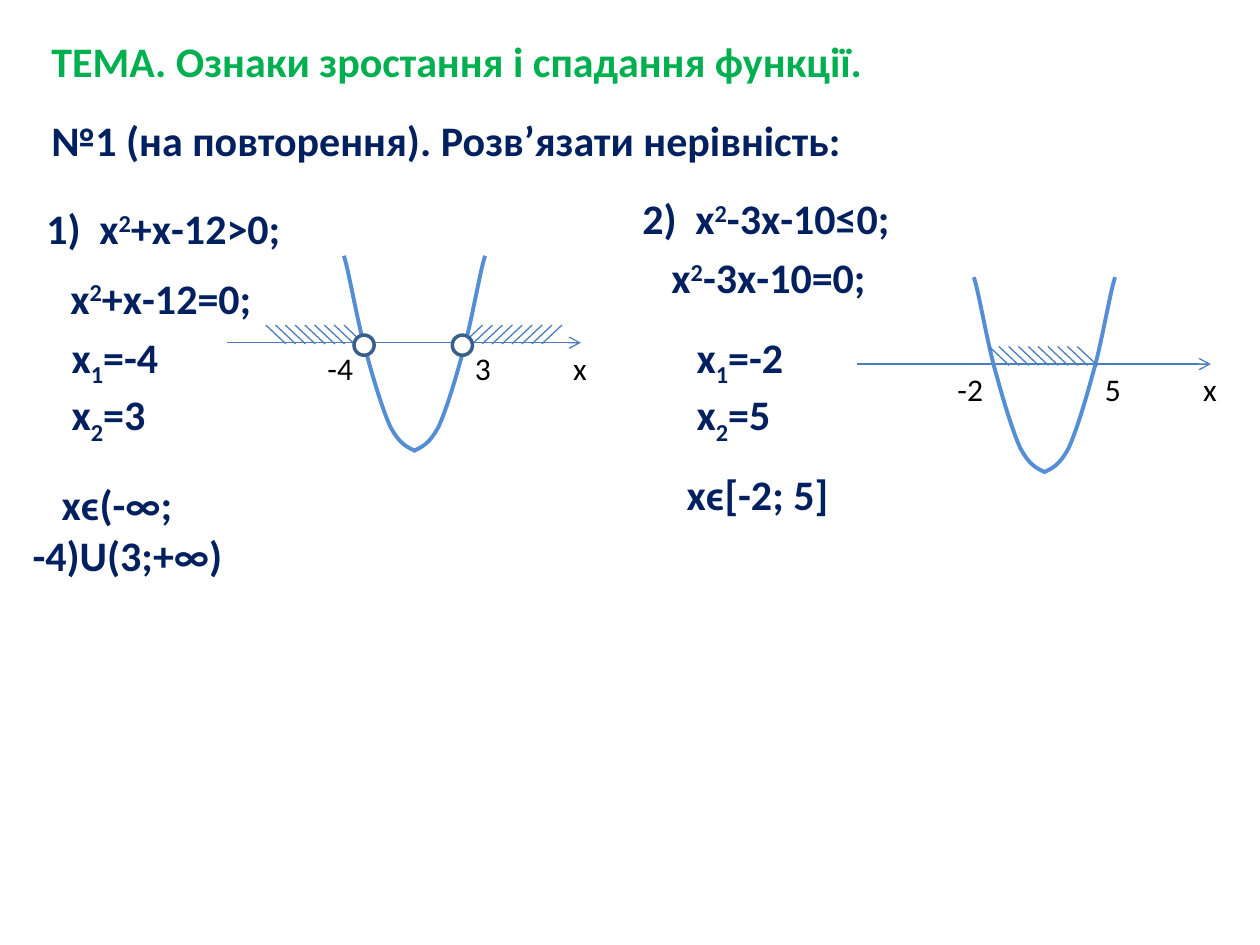
"""Build a slide that solves two quadratic inequalities with sketched parabolas."""
from dataclasses import dataclass

from lxml.etree import SubElement
from pptx import Presentation
from pptx.dml.color import RGBColor
from pptx.enum.shapes import MSO_CONNECTOR as Connector, MSO_SHAPE as Preset
from pptx.enum.text import MSO_AUTO_SIZE as AutoSize
from pptx.oxml.ns import qn
from pptx.util import Inches, Pt

COLORS = {
    "title": "00B050", "body": "002060", "label": "000000", "axis": "4B7EBC",
    "curve": "558ED5", "ring": "3A5F8C", "white": "FFFFFF",
}
BASELINES = {"^": "30000", "_": "-25000"}
CURVE_STEPS = 8
SYMMETRY_AXIS = 1.49
LEFT_BRANCH = [
    [(1.5, 0.86), (1.43, 0.83), (1.37, 0.8), (1.3, 0.67)],
    [(1.3, 0.67), (1.24, 0.54), (1.17, 0.31), (1.11, 0.09)],
    [(1.11, 0.09), (1.04, -0.14), (0.97, -0.57), (0.93, -0.69)],
]


@dataclass
class TextBlock:
    left: float
    top: float
    width: float
    height: float
    paragraphs: list[tuple[str, ...]]
    color: str = "body"
    margin: float = 0
    indent: float = 0


@dataclass
class Hatch:
    first: float
    last: float
    count: int
    rising: bool = False


@dataclass
class Graph:
    left: float
    axis: float
    roots: tuple[str, str]
    hatches: list[Hatch]
    open_points: tuple[float, ...] = ()


BLOCKS = [
    TextBlock(0.31, 0.23, 7.58, 0.5, [("ТЕМА. Ознаки зростання і спадання функції.",)], "title"),
    TextBlock(0.31, 0.86, 9.45, 0.5, [("№1 (на повторення). Розв’язати нерівність:",)]),
    TextBlock(0.27, 1.56, 2.23, 0.5, [("1)\tх", "^2", "+х-12>0;")], margin=0.42, indent=-0.42),
    TextBlock(0.23, 2.11, 2.23, 0.5, [("х", "^2", "+х-12=0;")], indent=0.23),
    TextBlock(0.47, 2.58, 1.17, 0.91, [("х", "_1", "=-4"), ("х", "_2", "=3")]),
    TextBlock(0.16, 3.75, 2.81, 0.5, [("хϵ(-∞; -4)U(3;+∞)",)], indent=0.23),
    TextBlock(5, 1.48, 2.23, 0.5, [("2)\tх", "^2", "-3х-10≤0;")], margin=0.42, indent=-0.42),
    TextBlock(5.23, 1.95, 1.88, 0.5, [("х", "^2", "-3х-10=0;")]),
    TextBlock(5.43, 2.58, 2.23, 0.91, [("х", "_1", "=-2"), ("х", "_2", "=5")]),
    TextBlock(5.12, 3.67, 3.52, 0.5, [("хϵ[-2; 5]",)], indent=0.23),
]
GRAPHS = [
    Graph(1.8, 2.72, ("-4", "3"),
          [Hatch(1.87, 2.5, 9, rising=True), Hatch(0.31, 0.93, 9)], (1.01, 1.79)),
    Graph(6.8, 2.89, ("-2", "5"), [Hatch(1.05, 1.75, 10)]),
]


def rgb(name: str) -> RGBColor:
    """Return a palette colour."""
    return RGBColor.from_string(COLORS[name])


def add_text(shapes, block: TextBlock, *, size: float = 24, bold: bool = True) -> None:
    """Add a text box whose parts may start with a superscript or subscript mark."""
    shape = shapes.add_textbox(*map(Inches, (block.left, block.top, block.width, block.height)))
    frame = shape.text_frame
    frame.word_wrap = True
    frame.auto_size = AutoSize.SHAPE_TO_FIT_TEXT
    for index, parts in enumerate(block.paragraphs):
        paragraph = frame.add_paragraph() if index else frame.paragraphs[0]
        properties = paragraph._p.get_or_add_pPr()
        properties.set("marL", str(Inches(block.margin)))
        properties.set("indent", str(Inches(block.indent)))
        for part in parts:
            run = paragraph.add_run()
            baseline = BASELINES.get(part[0])
            run.text = part[1:] if baseline else part
            font = run.font
            font.name, font.size, font.bold = "Calibri", Pt(size), bold
            font.color.rgb = rgb(block.color)
            if baseline:
                run._r.get_or_add_rPr().set("baseline", baseline)


def add_line(shapes, start: tuple[float, float], end: tuple[float, float],
             arrow: bool = False) -> None:
    """Add a thin straight line, with an arrowhead at its end if asked."""
    line = shapes.add_connector(Connector.STRAIGHT, *map(Inches, (*start, *end)))
    line.line.color.rgb = rgb("axis")
    line.line.width = Pt(0.75)
    if arrow:
        SubElement(line.line._get_or_add_ln(), qn("a:tailEnd"), type="arrow")
    SubElement(line._element.spPr, qn("a:effectLst"))


def bezier_point(curve: list[tuple[float, float]], t: float) -> tuple[float, float]:
    """Return the point at t on a cubic curve."""
    weights = ((1 - t) ** 3, 3 * t * (1 - t) ** 2, 3 * t ** 2 * (1 - t), t ** 3)
    x, y = (sum(w * value for w, value in zip(weights, axis)) for axis in zip(*curve))
    return x, y


def add_branch(shapes, graph: Graph, mirrored: bool) -> None:
    """Add one half of the parabola."""
    points = [LEFT_BRANCH[0][0]] + [
        bezier_point(curve, step / CURVE_STEPS)
        for curve in LEFT_BRANCH for step in range(1, CURVE_STEPS + 1)
    ]
    if mirrored:
        points = [(2 * SYMMETRY_AXIS - x, y) for x, y in points]
    placed = [(Inches(graph.left + x), Inches(graph.axis + y)) for x, y in points]
    builder = shapes.build_freeform(*placed[0])
    builder.add_line_segments(placed[1:], close=False)
    branch = builder.convert_to_shape()
    branch.shadow.inherit = False
    branch.fill.background()
    branch.line.color.rgb = rgb("curve")
    branch.line.width = Pt(2.25)


def add_ring(shapes, left: float, top: float) -> None:
    """Add the open circle of an excluded root."""
    ring = shapes.add_shape(Preset.OVAL, *map(Inches, (left, top, 0.16, 0.16)))
    ring.shadow.inherit = False
    ring.fill.solid()
    ring.fill.fore_color.rgb = rgb("white")
    ring.line.color.rgb = rgb("ring")
    ring.line.width = Pt(2)


def add_graph(slide, graph: Graph) -> None:
    """Add a grouped sketch of axis, parabola, labels, hatching and roots."""
    shapes = slide.shapes.add_group_shape().shapes
    left, axis = graph.left, graph.axis
    add_line(shapes, (left, axis), (left + 2.81, axis), arrow=True)
    for mirrored in (False, True):
        add_branch(shapes, graph, mirrored)
    labels = zip((*graph.roots, "х"), (0.7, 1.87, 2.65), (0.55, 0.39, 0.39))
    for text, offset, width in labels:
        label = TextBlock(left + offset, axis, width, 0.4, [(text,)], "label")
        add_text(shapes, label, size=18, bold=False)
    for hatch in graph.hatches:
        step = (hatch.last - hatch.first) / (hatch.count - 1)
        start_y, end_y = (0.01, -0.14) if hatch.rising else (-0.14, 0.01)
        for index in range(hatch.count):
            x = left + hatch.first + index * step
            add_line(shapes, (x, axis + start_y), (x + 0.16, axis + end_y))
    for offset in graph.open_points:
        add_ring(shapes, left + offset, axis - 0.06)


def main() -> None:
    """Build and save the presentation."""
    presentation = Presentation()
    presentation.slide_width, presentation.slide_height = Inches(10), Inches(7.5)
    slide = presentation.slides.add_slide(presentation.slide_layouts[6])
    for block in BLOCKS:
        add_text(slide.shapes, block)
    for graph in GRAPHS:
        add_graph(slide, graph)
    presentation.save("out.pptx")


if __name__ == "__main__":
    main()
